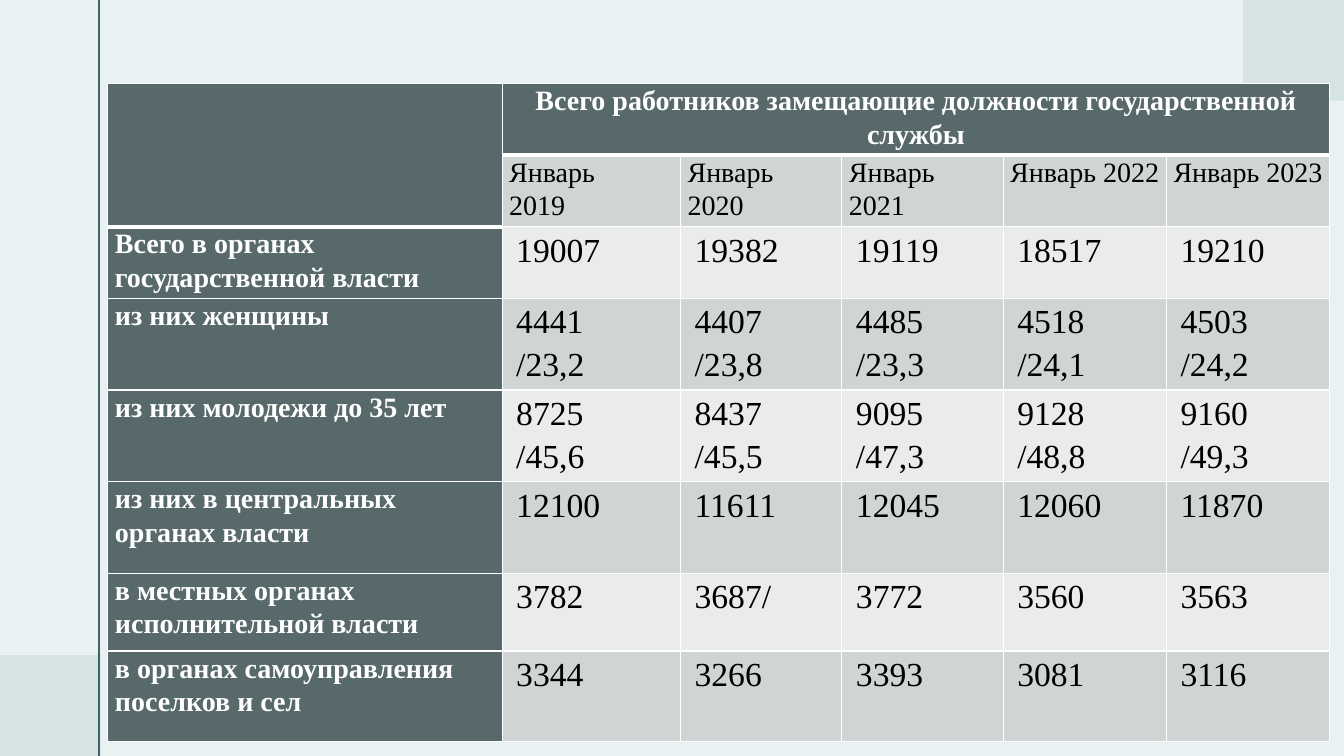
from lxml import etree
from pptx import Presentation, util as u
from pptx.dml.color import RGBColor
from pptx.enum import shapes, text
from pptx.oxml.ns import qn

WIDTH, HEIGHT = 13.33, 7.5
FONT = "Times New Roman"
COLORS = {
    "background": "EAF1F2", "corner": "D5E3E5", "rule": "40636A",
    "header": "58696B", "dark_band": "D1D4D4", "light_band": "EAEBEB",
    "white": "FFFFFF", "black": "000000",
}
COLUMNS = [3.91, 1.77, 1.6, 1.6, 1.62, 1.62]
ROWS = [0.71, 0.71, 0.71, 0.91, 0.91, 0.91, 0.77, 0.9]
TITLE = "Всего работников замещающие должности государственной службы"
MONTHS = ["Январь \n2019", "Январь 2020", "Январь 2021", "Январь 2022", "Январь 2023"]
STAFF = [
    ("Всего в органах государственной власти", "19007", "19382", "19119", "18517", "19210"),
    ("из них женщины", "4441\n/23,2", "4407\n/23,8", "4485\n/23,3", "4518\n/24,1", "4503\n/24,2"),
    ("из них молодежи до 35 лет",
     "8725\n/45,6", "8437\n/45,5", "9095\n/47,3", "9128\n/48,8", "9160\n/49,3"),
    ("из них в центральных органах власти", "12100", "11611", "12045", "12060", "11870"),
    ("в местных органах исполнительной власти", "3782", "3687/", "3772", "3560", "3563"),
    ("в органах самоуправления поселков и сел", "3344", "3266", "3393", "3081", "3116"),
]
# Text formats: size, bold, colour, alignment, line spacing, first-line indent
LEFT, CENTER, JUSTIFY = text.PP_ALIGN.LEFT, text.PP_ALIGN.CENTER, text.PP_ALIGN.JUSTIFY
FORMATS = {
    "title": (20, True, "white", CENTER, 1.07, 0),
    "label": (20, True, "white", LEFT, 1.07, 0),
    "month": (20, False, "black", LEFT, 1.07, 0),
    "value": (24, False, "black", JUSTIFY, 1.15, 0.07),
}
MARGINS = {"margin_left": 0.07, "margin_right": 0.07, "margin_top": 0, "margin_bottom": 0}


def rgb(name):
    return RGBColor.from_string(COLORS[name])


def add_backdrop(slide, width, height):
    """Background colour, two corner squares and the vertical rule."""
    slide.background.fill.solid()
    slide.background.fill.fore_color.rgb = rgb("background")
    for left, top in ((0, height - 1), (width - 1, 0)):
        square = slide.shapes.add_shape(
            shapes.MSO_SHAPE.RECTANGLE, u.Inches(left), u.Inches(top), u.Inches(1), u.Inches(1))
        square.shadow.inherit = False
        square.fill.solid()
        square.fill.fore_color.rgb = rgb("corner")
        square.line.fill.background()
    rule = slide.shapes.add_connector(
        shapes.MSO_CONNECTOR.STRAIGHT, u.Inches(0.98), 0, u.Inches(0.98), u.Inches(height))
    rule.line.color.rgb = rgb("rule")
    rule.line.width = u.Pt(1.5)
    etree.SubElement(rule._element.spPr, qn("a:effectLst"))


def set_borders(cell, row, column):
    """White grid, with a heavier edge under the header cells."""
    heavy = {
        "lnT": (row == 1 and column > 0) or (row, column) == (2, 0),
        "lnB": row == 0 or (row, column) == (1, 0),
    }
    properties = cell._tc.get_or_add_tcPr()
    for position, edge in enumerate(("lnL", "lnR", "lnT", "lnB")):
        line = etree.Element(qn(f"a:{edge}"), w=str(u.Pt(3 if heavy.get(edge) else 1)))
        fill = etree.SubElement(line, qn("a:solidFill"))
        etree.SubElement(fill, qn("a:srgbClr"), val=COLORS["white"])
        properties.insert(position, line)


def write_cell(cell, content, kind):
    size, bold, color, alignment, spacing, indent = FORMATS[kind]
    cell.text = content
    for paragraph in cell.text_frame.paragraphs:
        paragraph.alignment = alignment
        paragraph.line_spacing = spacing
        paragraph._p.get_or_add_pPr().set("indent", str(u.Inches(indent)))
        for run in paragraph.runs:
            for name, value in {"name": FONT, "size": u.Pt(size), "bold": bold}.items():
                setattr(run.font, name, value)
            run.font.color.rgb = rgb(color)


def add_staff_table(slide, left, top):
    table = slide.shapes.add_table(
        len(ROWS), len(COLUMNS), u.Inches(left), u.Inches(top),
        u.Inches(sum(COLUMNS)), u.Inches(sum(ROWS))).table
    for column, width in zip(table.columns, COLUMNS):
        column.width = u.Inches(width)
    for row, height in zip(table.rows, ROWS):
        row.height = u.Inches(height)

    # Fills, margins and borders
    for r in range(len(ROWS)):
        for c in range(len(COLUMNS)):
            cell = table.cell(r, c)
            band = "dark_band" if r % 2 else "light_band"
            cell.fill.solid()
            cell.fill.fore_color.rgb = rgb("header" if r == 0 or c == 0 else band)
            for name, value in MARGINS.items():
                setattr(cell, name, u.Inches(value))
            set_borders(cell, r, c)

    # Header: empty corner, spanning title, months
    table.cell(0, 0).merge(table.cell(1, 0))
    table.cell(0, 1).merge(table.cell(0, len(COLUMNS) - 1))
    write_cell(table.cell(0, 1), TITLE, "title")
    for c, month in enumerate(MONTHS, 1):
        write_cell(table.cell(1, c), month, "month")

    # Staff figures
    for r, record in enumerate(STAFF, 2):
        for c, content in enumerate(record):
            write_cell(table.cell(r, c), content, "value" if c else "label")


def main():
    presentation = Presentation()
    presentation.slide_width = u.Inches(WIDTH)
    presentation.slide_height = u.Inches(HEIGHT)
    slide = presentation.slides.add_slide(presentation.slide_layouts[6])
    add_backdrop(slide, WIDTH, HEIGHT)
    add_staff_table(slide, 1.07, 0.83)
    presentation.save("out.pptx")


if __name__ == "__main__":
    main()
